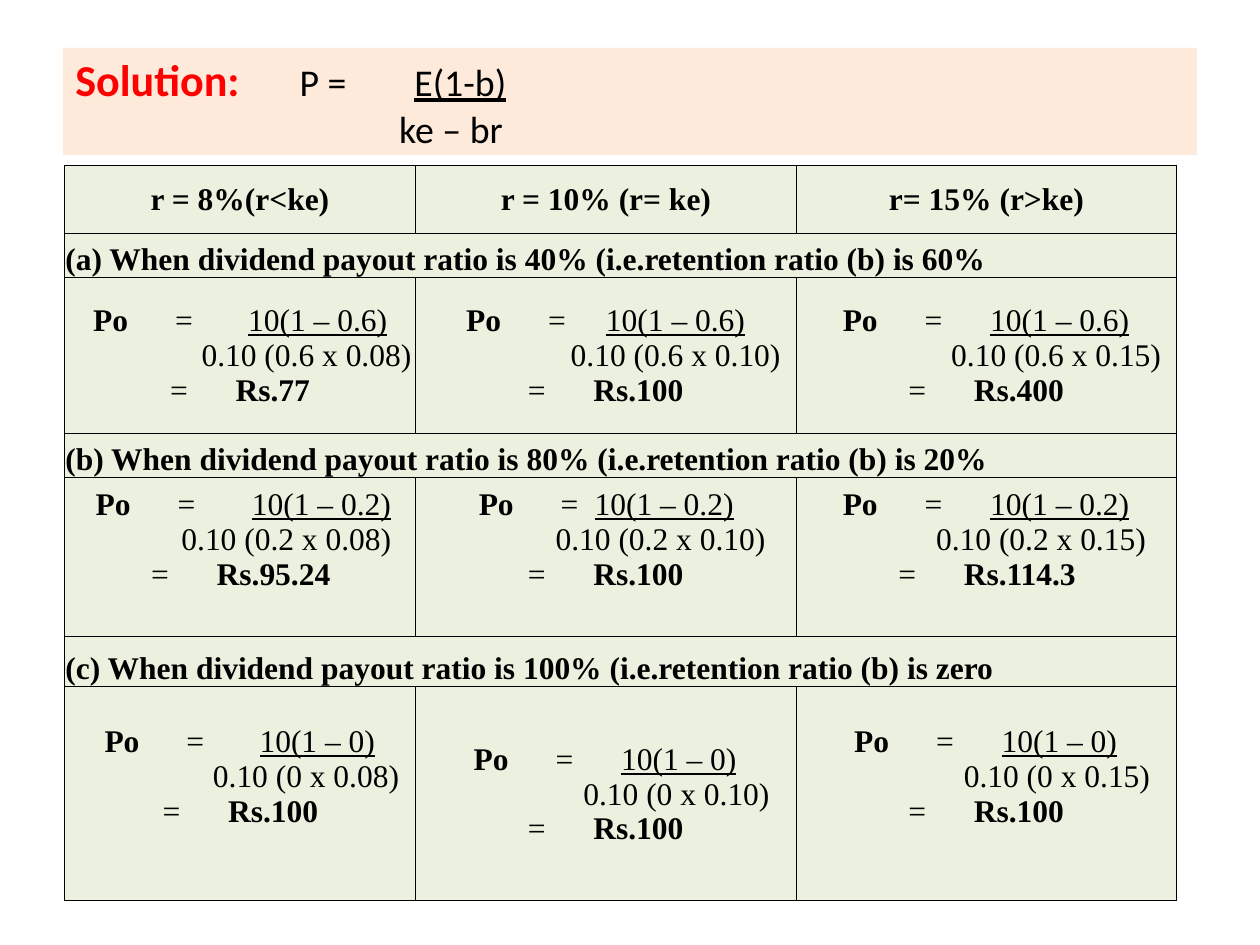
from pptx import Presentation
from pptx.dml.color import RGBColor
from pptx.enum.shapes import MSO_SHAPE
from pptx.enum.text import MSO_ANCHOR, PP_ALIGN
from pptx.oxml.ns import qn
from pptx.util import Inches, Pt
from lxml.etree import SubElement

HUES = {"peach": "FDEADA", "green": "EBF1DE", "red": "FF0000", "ink": "000000"}


def write(para, runs, stops=(), align=PP_ALIGN.LEFT, **base):
    """Fill a paragraph with (text, format) runs; stops are tab places in inches."""
    para.alignment = align
    if stops:
        tabs = SubElement(para._p.get_or_add_pPr(), qn("a:tabLst"))
        for stop in stops:
            SubElement(tabs, qn("a:tab"), pos=str(Inches(stop)), algn="l")
    for text, extra in runs:
        look = {"font": "Times New Roman", "size": 18, "hue": "ink",
                "bold": False, "line": False, **base, **extra}
        run = para.add_run()
        run.text = text
        run.font.name = look["font"]
        run.font.size = Pt(look["size"])
        run.font.bold = look["bold"]
        run.font.underline = look["line"]
        run.font.color.rgb = RGBColor.from_string(HUES[look["hue"]])


def style(cell, anchor):
    """Set the fill, margins, anchor and thin black borders of a cell."""
    cell.fill.solid()
    cell.fill.fore_color.rgb = RGBColor.from_string(HUES["green"])
    cell.vertical_anchor = anchor
    cell.margin_left = cell.margin_right = cell.margin_top = Inches(0.01)
    cell.margin_bottom = 0
    props = cell._tc.get_or_add_tcPr()
    for spot, side in enumerate(("lnL", "lnR", "lnT", "lnB")):
        edge = props.makeelement(qn(f"a:{side}"), {"w": str(Pt(0.5))})
        fill = SubElement(edge, qn("a:solidFill"))
        SubElement(fill, qn("a:srgbClr"), val=HUES["ink"])
        props.insert(spot, edge)


deck = Presentation()
deck.slide_width, deck.slide_height = Inches(10), Inches(7.5)
slide = deck.slides.add_slide(deck.slide_layouts[6])
bold, under = {"bold": True}, {"line": True}

# Heading with the formula
head = slide.shapes.add_shape(MSO_SHAPE.RECTANGLE, Inches(0.5), Inches(0.38),
                              Inches(9), Inches(0.85))
head.shadow.inherit = False
head.fill.solid()
head.fill.fore_color.rgb = RGBColor.from_string(HUES["peach"])
head.line.fill.background()
frame = head.text_frame
frame.word_wrap = True
frame.vertical_anchor = MSO_ANCHOR.MIDDLE
write(frame.paragraphs[0],
      [("Solution:", {"size": 25.2, "hue": "red", "bold": True}),
       ("\tP =\t", {}), ("E(1-b)", under)],
      stops=(1.78, 2.69), font="Calibri", size=21.6)
write(frame.add_paragraph(), [("\tke – br", {})],
      stops=(2.57,), font="Calibri", size=21.6)

# Table grid
wides = [2.79, 3.02, 3.02]
highs = [0.54, 0.35, 1.24, 0.35, 1.26, 0.4, 1.7]
table = slide.shapes.add_table(len(highs), len(wides), Inches(0.51), Inches(1.31),
                               Inches(sum(wides)), Inches(sum(highs))).table
for col, wide in zip(table.columns, wides):
    col.width = Inches(wide)
for row, high in zip(table.rows, highs):
    row.height = Inches(high)
for num, row in enumerate(table.rows):
    for cell in row.cells:
        style(cell, MSO_ANCHOR.BOTTOM if num % 2 else MSO_ANCHOR.MIDDLE)

for col, text in enumerate(("r = 8%(r<ke)", "r = 10% (r= ke)", "r= 15% (r>ke)")):
    write(table.cell(0, col).text_frame.paragraphs[0], [(text, bold)],
          align=PP_ALIGN.CENTER)

# Each case: letter, payout, retention, b, then per rate the result,
# the left of Po, numerator, denominator and result line, and the space below
cases = [
    ("a", "40%", "60%", "0.6", [("77", 0.22, 1.45, 1.08, 0.83, 0),
                                ("100", 0.39, 1.5, 1.22, 0.88, 0),
                                ("400", 0.36, 1.53, 1.22, 0.88, 0)]),
    ("b", "80%", "20%", "0.2", [("95.24", 0.24, 1.48, 0.92, 0.68, 0.28),
                                ("100", 0.49, 1.41, 1.1, 0.88, 0.28),
                                ("114.3", 0.36, 1.53, 1.1, 0.8, 0.28)]),
    ("c", "100%", "zero", "0", [("100", 0.31, 1.54, 1.17, 0.77, 0.28),
                                ("100", 0.45, 1.62, 1.32, 0.88, 0),
                                ("100", 0.45, 1.62, 1.32, 0.88, 0.28)]),
]
rates = ("0.08", "0.10", "0.15")
for num, (mark, pay, keep, b, sums) in enumerate(cases):
    top = 2 * num + 1
    table.cell(top, 0).merge(table.cell(top, 2))
    title = (f"({mark}) When dividend payout ratio is {pay} "
             f"(i.e.retention ratio (b) is {keep}")
    write(table.cell(top, 0).text_frame.paragraphs[0], [(title, bold)])
    for col, (worth, po, upper, lower, equal, below) in enumerate(sums):
        cell = table.cell(top + 1, col)
        cell.margin_bottom = Inches(below)
        frame = cell.text_frame
        write(frame.paragraphs[0],
              [("\tPo", bold), ("\t=\t", {}), (f"10(1 – {b})", under)],
              stops=(po, po + 0.65, upper))
        write(frame.add_paragraph(), [(f"\t0.10 ({b} x {rates[col]})", {})],
              stops=(lower,))
        write(frame.add_paragraph(), [("\t=\t", {}), (f"Rs.{worth}", bold)],
              stops=(equal, equal + 0.52))

deck.save("out.pptx")
